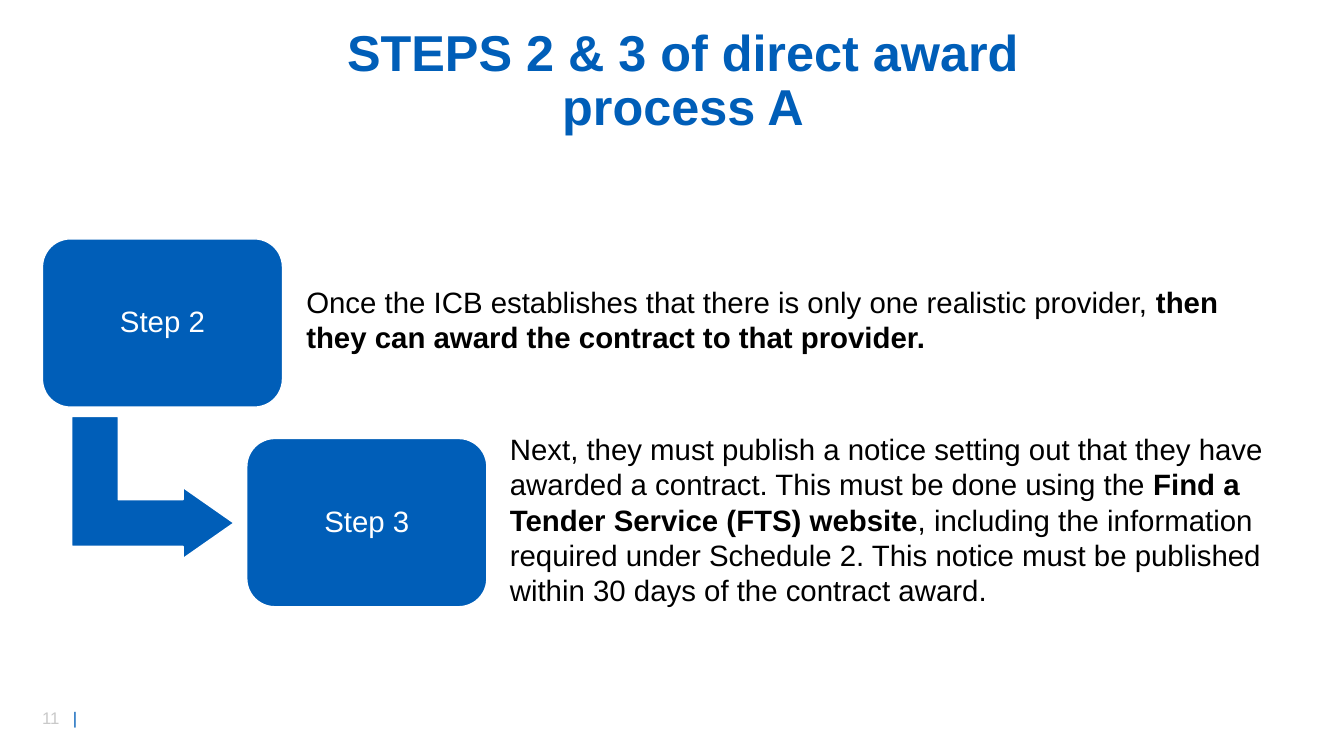
import pptx
import pptx.util
import pptx.dml.color
import pptx.enum.shapes
import pptx.enum.text
from lxml import etree

Cm, Pt = pptx.util.Cm, pptx.util.Pt
SHAPE = pptx.enum.shapes.MSO_SHAPE
ALIGN = pptx.enum.text.PP_ALIGN
MIDDLE = pptx.enum.text.MSO_ANCHOR.MIDDLE
COLORS = {"blue": "005EB8", "white": "FFFFFF", "black": "000000", "grey": "C9C9C9"}


def add_run(p, text, size, color, bold=False):
    r = p.add_run()
    r.text = text
    for name, value in {"name": "Arial", "size": Pt(size), "bold": bold}.items():
        setattr(r.font, name, value)
    r.font.color.rgb = pptx.dml.color.RGBColor.from_string(COLORS[color])


def add_blue_shape(kind, left, top, width, height):
    sp = s.shapes.add_shape(kind, Cm(left), Cm(top), Cm(width), Cm(height))
    sp.shadow.inherit = False
    sp.fill.solid()
    sp.fill.fore_color.rgb = pptx.dml.color.RGBColor.from_string(COLORS["blue"])
    sp.line.color.rgb = pptx.dml.color.RGBColor.from_string(COLORS["white"])
    sp.line.width = Pt(1)
    return sp


prs = pptx.Presentation()
prs.slide_width, prs.slide_height = Cm(33.87), Cm(19.05)
s = prs.slides.add_slide(prs.slide_layouts[5])

# Title
title = s.shapes.title
for name, value in {"left": 6.27, "top": 1.22, "width": 21.89, "height": 1.7}.items():
    setattr(title, name, Cm(value))
tf = title.text_frame
tf.auto_size = pptx.enum.text.MSO_AUTO_SIZE.NONE
tf.vertical_anchor = MIDDLE
p = tf.paragraphs[0]
p.alignment, p.line_spacing = ALIGN.CENTER, 0.9
add_run(p, "STEPS 2 & 3 of direct award process A", 36, "blue", True)

# Arrow from step 2 to step 3
arrow = add_blue_shape(SHAPE.BENT_UP_ARROW, 2.06, 10.24, 3.58, 4.09)
arrow.rotation = 90
for i, value in enumerate([0.328, 0.25, 0.358]):
    arrow.adjustments[i] = value

# Step boxes, each with its explanation: (text, bold) pieces
steps = [
    ("Step 2", (1.07, 6.02), (7.47, 7.04, 24, 2.06), [
        ("Once the ICB establishes that there is only one realistic provider, ", False),
        ("then they can award the contract to that provider.", True)]),
    ("Step 3", (6.22, 11.05), (12.6, 10.74, 21.13, 4.75), [
        ("Next, they must publish a notice setting out that they have awarded a contract. "
         "This must be done using the ", False),
        ("Find a Tender Service (FTS) website", True),
        (", including the information required under Schedule 2. This notice must be "
         "published within 30 days of the contract award.", False)]),
]
for label, corner, area, pieces in steps:
    sp = add_blue_shape(SHAPE.ROUNDED_RECTANGLE, *corner, 6.05, 4.24)
    tf = sp.text_frame
    tf.vertical_anchor = MIDDLE
    for side in ("left", "top", "right", "bottom"):
        setattr(tf, "margin_" + side, Cm(0.43))
    p = tf.paragraphs[0]
    p.alignment, p.line_spacing = ALIGN.CENTER, 0.9
    add_run(p, label, 21, "white")

    tf = s.shapes.add_textbox(*[Cm(v) for v in area]).text_frame
    tf.word_wrap = True
    for text, bold in pieces:
        add_run(tf.paragraphs[0], text, 21, "black", bold)

# Page number, with a tab stop before the bar
tf = s.shapes.add_textbox(Cm(0.81), Cm(17.7), Cm(1.8), Cm(0.76)).text_frame
tf.word_wrap = True
p = tf.paragraphs[0]
ns = "{http://schemas.openxmlformats.org/drawingml/2006/main}"
tabs = etree.SubElement(p._p.get_or_add_pPr(), ns + "tabLst")
etree.SubElement(tabs, ns + "tab", pos=str(Cm(0.78)), algn="l")
add_run(p, "11\t", 12, "grey")
add_run(p, "|", 12, "blue")

prs.save("out.pptx")
